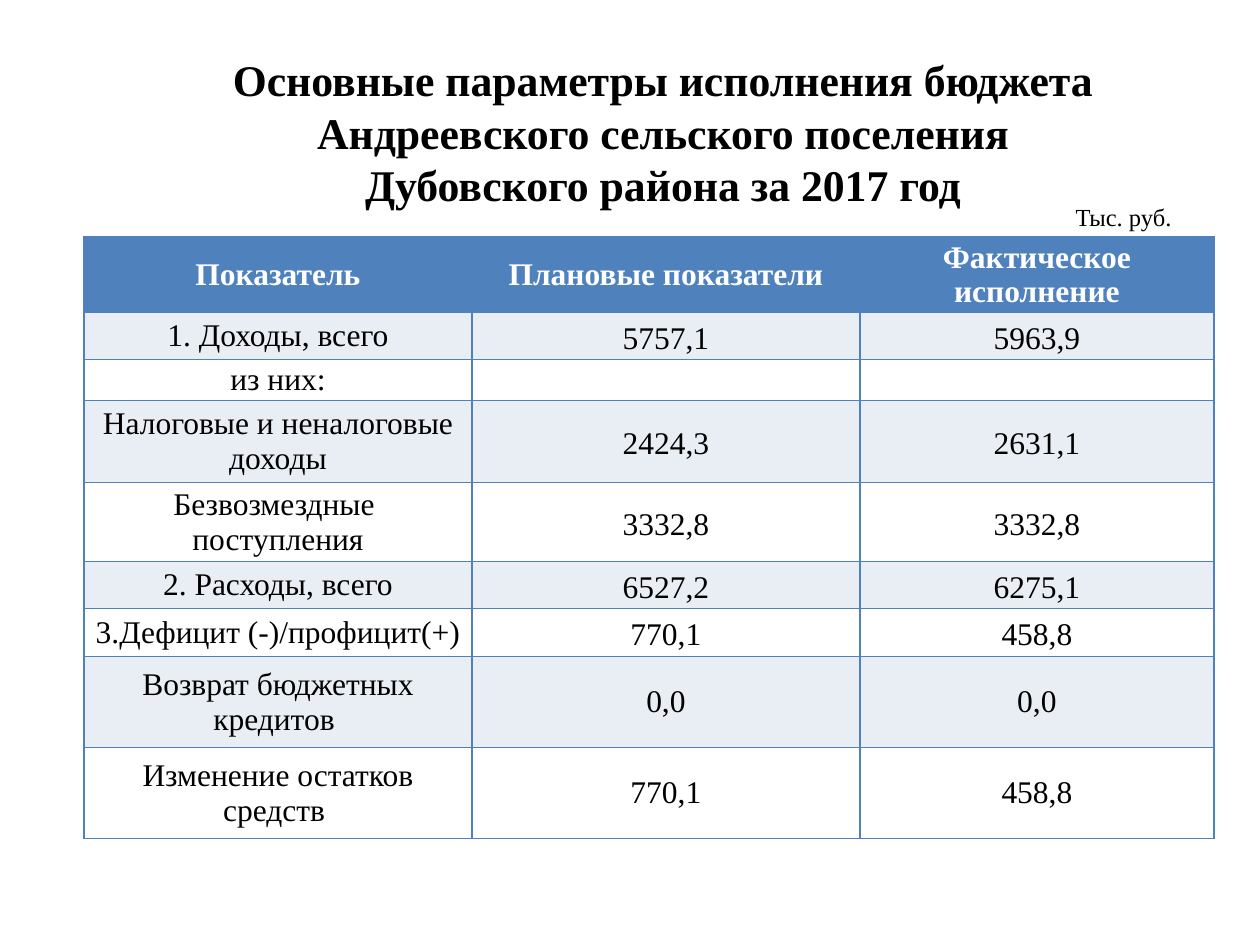
from lxml import etree
from pptx import Presentation
from pptx.dml.color import RGBColor
from pptx.enum.text import MSO_ANCHOR, PP_ALIGN
from pptx.oxml.ns import qn
from pptx.util import Emu, Pt

PX = 914400 / 126
FONT = "Times New Roman"
BLACK = RGBColor(0x00, 0x00, 0x00)
WHITE = RGBColor(0xFF, 0xFF, 0xFF)
BLUE = RGBColor(0x4F, 0x81, 0xBD)
PALE = RGBColor(0xE9, 0xED, 0xF4)
MIDDLE = MSO_ANCHOR.MIDDLE
CENTER, RIGHT = PP_ALIGN.CENTER, PP_ALIGN.RIGHT

TITLE = ("Основные параметры исполнения бюджета\n"
         "Андреевского сельского поселения\n"
         "Дубовского района за 2017 год")
COLUMN_WIDTHS = (388, 388, 354)
# Row height, then the three cells
ROWS = (
    (74, "Показатель", "Плановые показатели", "Фактическое исполнение"),
    (47, "1. Доходы, всего", "5757,1", "5963,9"),
    (41, "из них:", "", ""),
    (82, "Налоговые и неналоговые доходы", "2424,3", "2631,1"),
    (79, "Безвозмездные \nпоступления", "3332,8", "3332,8"),
    (47, "2. Расходы, всего", "6527,2", "6275,1"),
    (48, "3.Дефицит (-)/профицит(+)", "770,1", "458,8"),
    (91, "Возврат бюджетных кредитов ", "0,0", "0,0"),
    (91, "Изменение остатков средств ", "770,1", "458,8"),
)
PADDED_FROM = 7  # the last two rows keep the default margins


def px(n):
    return Emu(round(n * PX))


def style(p, size, color, bold=False, align=CENTER):
    p.alignment = align
    p.font.name, p.font.size, p.font.bold = FONT, Pt(size), bold
    p.font.color.rgb = color


def add_label(slide, box, text, size, bold=False, align=CENTER):
    tf = slide.shapes.add_textbox(*map(px, box)).text_frame
    tf.word_wrap = True
    tf.vertical_anchor = MIDDLE
    p = tf.paragraphs[0]
    p.text = text.replace("\n", "\v")
    style(p, size, BLACK, bold, align)


def set_borders(cell):
    """Put a thin blue line on all four sides; lines must precede the fill."""
    tc_pr = cell._tc.get_or_add_tcPr()
    for i, side in enumerate(("lnL", "lnR", "lnT", "lnB")):
        ln = etree.Element(qn(f"a:{side}"), w=str(Pt(1)))
        fill = etree.SubElement(ln, qn("a:solidFill"))
        etree.SubElement(fill, qn("a:srgbClr"), val=str(BLUE))
        tc_pr.insert(i, ln)


def fill_cell(cell, text, row, col):
    header = row == 0
    cell.fill.solid()
    cell.fill.fore_color.rgb = BLUE if header else PALE if row % 2 else WHITE
    set_borders(cell)
    cell.vertical_anchor = MIDDLE
    if row < PADDED_FROM:
        cell.margin_left = cell.margin_right = 0
        cell.margin_top = cell.margin_bottom = 0
    cell.text = text
    for p in cell.text_frame.paragraphs:
        style(p, 18, WHITE if header else BLACK, header)
        if text and col and 0 < row < PADDED_FROM:
            p.line_spacing = 1.15


def add_budget_table(slide, left, top):
    width, height = sum(COLUMN_WIDTHS), sum(row[0] for row in ROWS)
    table = slide.shapes.add_table(len(ROWS), len(COLUMN_WIDTHS), px(left),
                                   px(top), px(width), px(height)).table
    for column, w in zip(table.columns, COLUMN_WIDTHS):
        column.width = px(w)
    for r, (h, *texts) in enumerate(ROWS):
        table.rows[r].height = px(h)
        for c, text in enumerate(texts):
            fill_cell(table.cell(r, c), text, r, c)


def main():
    prs = Presentation()
    prs.slide_width, prs.slide_height = px(1260), px(945)
    slide = prs.slides.add_slide(prs.slide_layouts[6])
    add_label(slide, (77, 44, 1172, 176), TITLE, 25, bold=True)
    add_budget_table(slide, 84, 237)
    add_label(slide, (907, 195, 277, 43), "Тыс. руб.", 14, align=RIGHT)
    prs.save("out.pptx")


if __name__ == "__main__":
    main()
